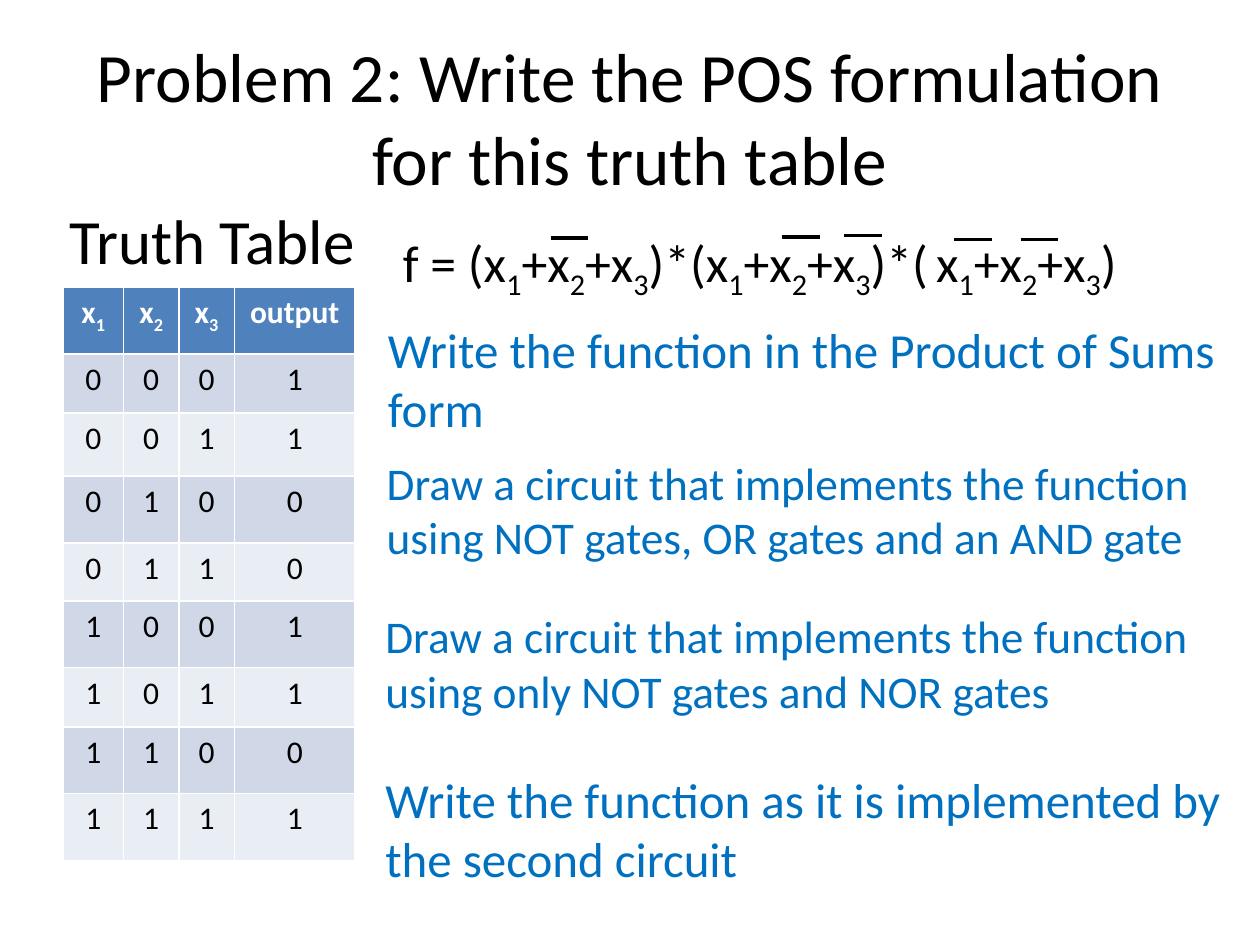
import dataclasses
import itertools

import lxml.etree
import pptx
import pptx.dml.color
import pptx.enum.shapes
import pptx.enum.text
import pptx.oxml.ns
import pptx.util

PX = 9144  # EMU in one px, 100 px to the inch


@dataclasses.dataclass(frozen=True)
class Theme:
    font: str = "Calibri"
    black: str = "000000"
    white: str = "FFFFFF"
    task: str = "0070C0"
    header: str = "4F81BD"
    bands: tuple = ("D0D8E8", "E9EDF4")
    title: float = 39.6
    caption: float = 36
    formula: float = 29.6
    gap: float = 20.4
    large_task: float = 28
    small_task: float = 25.9
    cell: float = 18


theme = Theme()
rgb = pptx.dml.color.RGBColor.from_string


def add_runs(p, text, size, color, bold=False, subscripts=False):
    """Add text to p; with subscripts, each digit is lowered in its own run."""
    pieces = [(False, text)]
    if subscripts:
        pieces = [(key, "".join(chars)) for key, chars in itertools.groupby(text, str.isdigit)]
    for lowered, piece in pieces:
        r = p.add_run()
        r.text = piece
        r.font.name = theme.font
        r.font.size = pptx.util.Pt(size)
        r.font.bold = bold
        r.font.color.rgb = rgb(color)
        if lowered:
            r.font._element.set("baseline", "-25000")


def add_text_box(shapes, *box):
    """Add a wrapping text box and return its first paragraph."""
    sp = shapes.add_textbox(*(v * PX for v in box))
    sp.text_frame.word_wrap = True
    return sp.text_frame.paragraphs[0]


prs = pptx.Presentation()
prs.slide_width, prs.slide_height = 1000 * PX, 750 * PX
s = prs.slides.add_slide(prs.slide_layouts[5])

# Title
title = s.shapes.title
title.left, title.top, title.width, title.height = 50 * PX, 30 * PX, 900 * PX, 125 * PX
title.text_frame.auto_size = pptx.enum.text.MSO_AUTO_SIZE.NONE
add_runs(title.text_frame.paragraphs[0],
         "Problem 2: Write the POS formulation for this truth table", theme.title, theme.black)

# Truth table
add_runs(add_text_box(s.shapes, 34, 155, 263, 71), " Truth Table", theme.caption, theme.black)

outputs = "11001101"
inputs = itertools.product("01", repeat=3)
rows = [("x1", "x2", "x3", "output")] + [bits + (out,) for bits, out in zip(inputs, outputs)]
col_widths = (48, 44, 44, 96)
row_heights = (53, 47, 50, 53, 46, 53, 47, 53, 53)

table = s.shapes.add_table(len(rows), len(col_widths), 50 * PX, 228 * PX,
                           sum(col_widths) * PX, sum(row_heights) * PX).table
for column, width in zip(table.columns, col_widths):
    column.width = width * PX
for i, (values, height) in enumerate(zip(rows, row_heights)):
    is_header = i == 0
    table.rows[i].height = height * PX
    for j, value in enumerate(values):
        cell = table.cell(i, j)
        cell.fill.solid()
        cell.fill.fore_color.rgb = rgb(theme.header if is_header else theme.bands[(i - 1) % 2])
        p = cell.text_frame.paragraphs[0]
        p.alignment = pptx.enum.text.PP_ALIGN.CENTER
        add_runs(p, value, theme.cell, theme.white if is_header else theme.black,
                 bold=is_header, subscripts=is_header)

# Formula with a bar over each negated input
formula = s.shapes.add_group_shape()
p = add_text_box(formula.shapes, 310, 178, 627, 59)
for text, size in (("f = (x1+x2+x3)*(x1+x2+x3)*(", theme.formula),
                   (" ", theme.gap),
                   ("x1+x2+x3)", theme.formula)):
    add_runs(p, text, size, theme.black, subscripts=True)

bar_width = 30
for x, y in ((437, 189), (621, 188), (670, 187), (757, 190), (810, 190)):
    bar = formula.shapes.add_connector(pptx.enum.shapes.MSO_CONNECTOR.STRAIGHT,
                                       x * PX, y * PX, (x + bar_width) * PX, y * PX)
    bar.line.color.rgb = rgb(theme.black)
    bar.line.width = pptx.util.Pt(2)
    lxml.etree.SubElement(bar._element.spPr, pptx.oxml.ns.qn("a:effectLst"))

# Tasks
tasks = (
    (298, 249, 95, theme.large_task, "Write the function in the Product of Sums form"),
    (297, 356, 110, theme.small_task,
     "Draw a circuit that implements the function using NOT gates, OR gates and an AND gate"),
    (296, 478, 110, theme.small_task,
     "Draw a circuit that implements the function using only NOT gates and NOR gates"),
    (296, 606, 110, theme.large_task,
     "Write the function as it is implemented by the second circuit"),
)
for x, y, height, size, text in tasks:
    add_runs(add_text_box(s.shapes, x, y, 685, height), text, size, theme.task)

prs.save("out.pptx")
